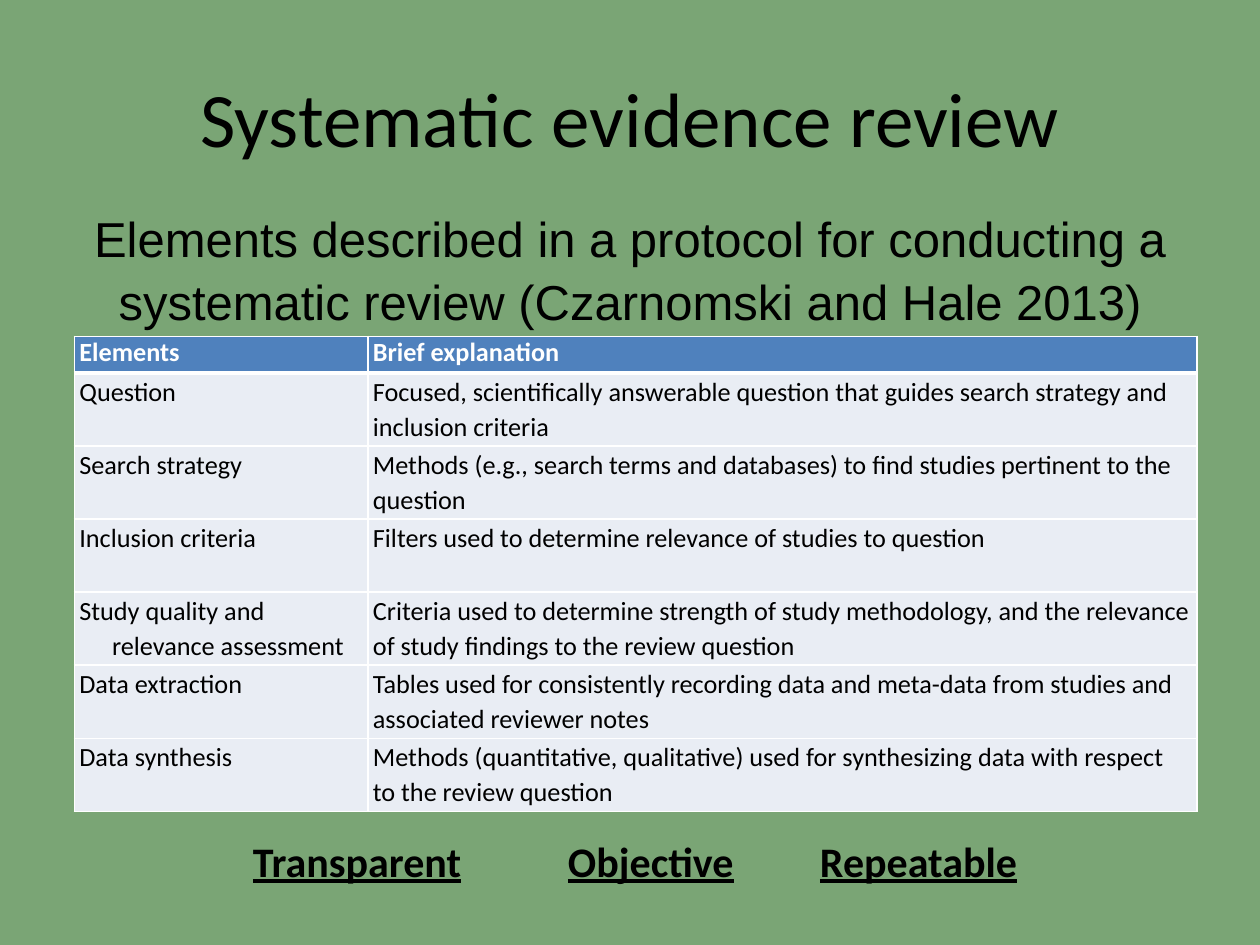
"""Build the systematic evidence review slide."""
from dataclasses import dataclass

from lxml import etree
from pptx import Presentation
from pptx.dml.color import RGBColor
from pptx.enum.text import MSO_ANCHOR, PP_ALIGN
from pptx.oxml.ns import qn
from pptx.util import Emu, Pt

CENTER, LEFT = PP_ALIGN.CENTER, PP_ALIGN.LEFT
TOP, MIDDLE = MSO_ANCHOR.TOP, MSO_ANCHOR.MIDDLE
EMU_PER_PX = 9144
COLORS = {
    "background": "7AA575",
    "text": "000000",
    "header": "4F81BD",
    "body": "E9EDF4",
    "white": "FFFFFF",
}
TABLE_BOX = (59, 267, 891, 377)
COLUMN_WIDTHS = (233, 658)
HEADER_HEIGHT, ROW_HEIGHT = 29, 58
CELL_FORMAT = {
    "margin_left": Emu(4 * EMU_PER_PX),
    "margin_right": Emu(4 * EMU_PER_PX),
    "margin_top": 0,
    "margin_bottom": 0,
}
HEADER_SPACING = {"space_before": Pt(2), "space_after": Pt(2)}
BODY_SPACING = {"line_spacing": 1.1}
HANGING_INDENT = 26
HANGING_ELEMENT = "Study quality and relevance assessment"
ROWS = (
    ("Elements", "Brief explanation"),
    ("Question", "Focused, scientifically answerable question that guides search strategy and inclusion criteria"),
    ("Search strategy", "Methods (e.g., search terms and databases) to find studies pertinent to the question"),
    ("Inclusion criteria", "Filters used to determine relevance of studies to question"),
    (HANGING_ELEMENT, "Criteria used to determine strength of study methodology, and the relevance of study findings to the review question"),
    ("Data extraction", "Tables used for consistently recording data and meta-data from studies and associated reviewer notes"),
    ("Data synthesis", "Methods (quantitative, qualitative) used for synthesizing data with respect to the review question"),
)


@dataclass(frozen=True)
class TextBlock:
    """A centred text box; odd-numbered pieces separate the even ones."""

    box: tuple[int, int, int, int]
    pieces: tuple[str, ...]
    size: int
    font: str = "Calibri"
    anchor: MSO_ANCHOR = TOP
    emphasis: bool = False
    line_spacing: float = 1.0


BLOCKS = (
    TextBlock((50, 30, 900, 125), ("Systematic evidence review",), 44, anchor=MIDDLE),
    TextBlock(
        (50, 158, 900, 108),
        ("Elements described in a protocol for conducting a systematic review (Czarnomski and Hale 2013)",),
        28, font="Arial", line_spacing=1.06,
    ),
    TextBlock(
        (75, 658, 858, 50),
        ("Transparent", "\t\t", "Objective", "\t\t", "Repeatable"),
        24, emphasis=True,
    ),
)


def px(length: int) -> Emu:
    """Turn px into EMU."""
    return Emu(length * EMU_PER_PX)


def color(name: str) -> RGBColor:
    """Look up a named colour."""
    return RGBColor.from_string(COLORS[name])


def apply_format(target, values: dict) -> None:
    """Set every attribute in values on the target."""
    for name, value in values.items():
        setattr(target, name, value)


def add_run(paragraph, text: str, color_name: str, values: dict) -> None:
    """Add a formatted run to a paragraph."""
    run = paragraph.add_run()
    run.text = text
    apply_format(run.font, values)
    run.font.color.rgb = color(color_name)


def add_text(slide, block: TextBlock) -> None:
    """Draw a text block."""
    frame = slide.shapes.add_textbox(*map(px, block.box)).text_frame
    apply_format(frame, {"word_wrap": True, "vertical_anchor": block.anchor})
    paragraph = frame.paragraphs[0]
    apply_format(paragraph, {"alignment": CENTER, "line_spacing": block.line_spacing})
    for index, piece in enumerate(block.pieces):
        add_run(paragraph, piece, "text", {
            "name": block.font,
            "size": Pt(block.size),
            "bold": block.emphasis,
            "underline": block.emphasis and index % 2 == 0,
        })


def add_borders(cell, bottom_width: int) -> None:
    """Give a cell white borders, placed ahead of its fill."""
    properties = cell._tc.get_or_add_tcPr()
    widths = {"a:lnL": 1, "a:lnR": 1, "a:lnT": 1, "a:lnB": bottom_width}
    for index, (tag, width) in enumerate(widths.items()):
        line = etree.Element(qn(tag), w=str(Pt(width)))
        fill = etree.SubElement(line, qn("a:solidFill"))
        etree.SubElement(fill, qn("a:srgbClr"), val=COLORS["white"])
        properties.insert(index, line)


def fill_cell(cell, text: str, is_header: bool) -> None:
    """Write and style one table cell."""
    apply_format(cell, CELL_FORMAT)
    cell.fill.solid()
    cell.fill.fore_color.rgb = color("header" if is_header else "body")
    add_borders(cell, 3 if is_header else 1)
    paragraph = cell.text_frame.paragraphs[0]
    paragraph.alignment = LEFT
    apply_format(paragraph, HEADER_SPACING if is_header else BODY_SPACING)
    if text == HANGING_ELEMENT:
        properties = paragraph._p.get_or_add_pPr()
        properties.set("marL", str(px(HANGING_INDENT)))
        properties.set("indent", str(px(-HANGING_INDENT)))
    add_run(paragraph, text, "white" if is_header else "text",
            {"name": "Calibri", "size": Pt(15), "bold": is_header})


def add_elements_table(slide) -> None:
    """Draw the table of review elements."""
    table = slide.shapes.add_table(len(ROWS), len(COLUMN_WIDTHS), *map(px, TABLE_BOX)).table
    for column, width in zip(table.columns, COLUMN_WIDTHS):
        column.width = px(width)
    for row_index, texts in enumerate(ROWS):
        is_header = row_index == 0
        table.rows[row_index].height = px(HEADER_HEIGHT if is_header else ROW_HEIGHT)
        for column_index, text in enumerate(texts):
            fill_cell(table.cell(row_index, column_index), text, is_header)


def main() -> None:
    """Build and save the presentation."""
    presentation = Presentation()
    apply_format(presentation, {"slide_width": px(1000), "slide_height": px(750)})
    slide = presentation.slides.add_slide(presentation.slide_layouts[6])
    slide.background.fill.solid()
    slide.background.fill.fore_color.rgb = color("background")
    title, subtitle, qualities = BLOCKS
    add_text(slide, title)
    add_text(slide, subtitle)
    add_elements_table(slide)
    add_text(slide, qualities)
    presentation.save("out.pptx")


if __name__ == "__main__":
    main()
